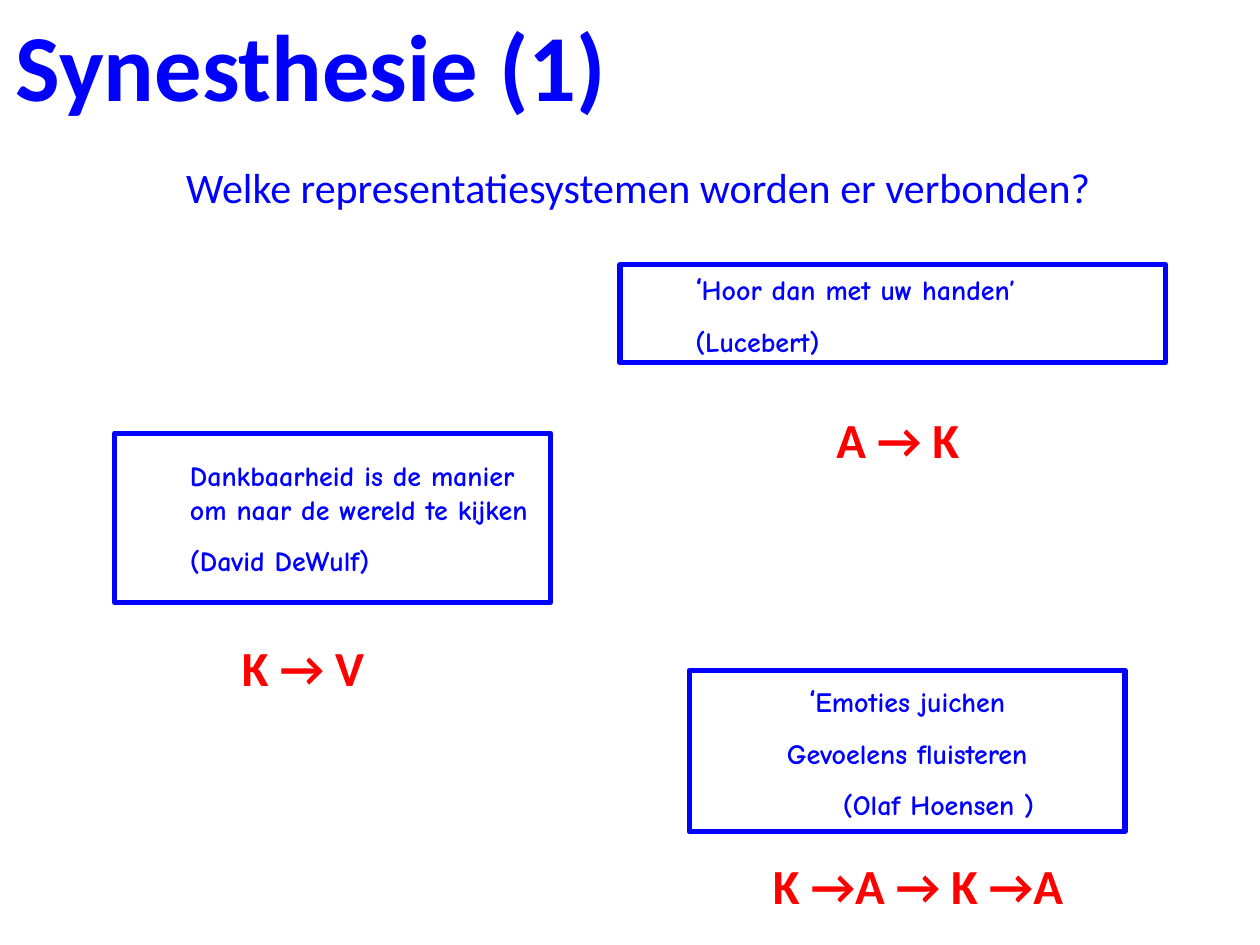
from dataclasses import dataclass

from pptx import Presentation
from pptx.dml.color import RGBColor
from pptx.enum.shapes import MSO_SHAPE
from pptx.enum.text import MSO_ANCHOR, PP_ALIGN
from pptx.util import Inches, Pt

W, H = 10, 7.5


@dataclass(frozen=True)
class Theme:
    """Colours, fonts and type sizes of the slide."""
    blue: RGBColor = RGBColor(0, 0, 255)
    red: RGBColor = RGBColor(255, 0, 0)
    white: RGBColor = RGBColor(255, 255, 255)
    sans: str = "Calibri"
    hand: str = "Comic Neue"
    title: int = 54
    question: int = 24
    answer: int = 28
    quote: int = 16
    mark: int = 18
    border: int = 3
    gap: int = 10


T = Theme()
LEFT, MID = PP_ALIGN.LEFT, PP_ALIGN.CENTER


def place(box):
    """Turn a box in inches into slide lengths."""
    return [Inches(v) for v in box]


def add_run(p, text, **fmt):
    """Append a run with the given font values."""
    r = p.add_run()
    r.text = text
    color = fmt.pop("color")
    for name, value in fmt.items():
        setattr(r.font, name, value)
    r.font.color.rgb = color


def add_label(s, box, text, size, color, bold=True, align=MID,
              anchor=MSO_ANCHOR.TOP, wrap=True):
    """Place one line of sans text in the box."""
    tf = s.shapes.add_textbox(*place(box)).text_frame
    tf.word_wrap, tf.vertical_anchor = wrap, anchor
    p = tf.paragraphs[0]
    p.alignment = align
    add_run(p, text, size=Pt(size), bold=bold, name=T.sans, color=color)


def add_quote(s, box, lines):
    """Place a bordered quote whose lines are (text, alignment, level)."""
    sp = s.shapes.add_shape(MSO_SHAPE.RECTANGLE, *place(box))
    sp.shadow.inherit = False
    sp.fill.solid()
    sp.fill.fore_color.rgb = T.white
    sp.line.color.rgb = T.blue
    sp.line.width = Pt(T.border)
    tf = sp.text_frame
    tf.word_wrap, tf.vertical_anchor = True, MSO_ANCHOR.MIDDLE
    for i, (text, align, level) in enumerate(lines):
        p = tf.add_paragraph() if i else tf.paragraphs[0]
        p.alignment, p.level, p.space_after = align, level, Pt(T.gap)
        pPr = p._p.get_or_add_pPr()
        pPr.set("marL", str(Inches(0.5 * level)))
        pPr.set("indent", "0")
        fmt = dict(bold=True, name=T.hand, color=T.blue)
        if text.startswith("‘"):
            add_run(p, "‘", size=Pt(T.mark), **fmt)
            text = text[1:]
        add_run(p, text, size=Pt(T.quote), **fmt)


def add_heading(s, box):
    """Place the title and, below it, the question."""
    x, y, w, h = box
    add_label(s, (x, y, w * 0.49, h * 0.58), "Synesthesie (1)", T.title,
              T.blue, anchor=MSO_ANCHOR.MIDDLE, wrap=False)
    add_label(s, (x + w * 0.136, y + h * 0.71, w * 0.75, h * 0.29),
              "Welke representatiesystemen worden er verbonden?",
              T.question, T.blue, bold=False, align=LEFT, wrap=False)


def add_example(s, box, lines, answer, answer_box):
    """Place a quote and the answer that belongs to it."""
    add_quote(s, box, lines)
    add_label(s, answer_box, answer, T.answer, T.red)


def main():
    """Build and save the slide."""
    prs = Presentation()
    prs.slide_width, prs.slide_height = Inches(W), Inches(H)
    s = prs.slides.add_slide(prs.slide_layouts[6])
    add_heading(s, (0.02, 0, W, H * 0.232))
    examples = [
        ((4.92, 2.1, 4.33, 0.78),
         [("‘Hoor dan met uw handen’", LEFT, 1), ("(Lucebert)", LEFT, 1)],
         "A → K", (6.18, 3.2, 1.89, 0.57)),
        ((0.91, 3.44, 3.46, 1.34),
         [("Dankbaarheid is de manier om naar de wereld te kijken", LEFT, 1),
          ("(David DeWulf)", LEFT, 1)],
         "K → V", (1.46, 5.01, 1.89, 0.57)),
        ((5.47, 5.32, 3.46, 1.28),
         [("‘Emoties juichen", MID, 0), ("Gevoelens fluisteren", MID, 0),
          ("(Olaf Hoensen )", MID, 1)],
         "K →A → K →A", (5.87, 6.74, 2.83, 0.57)),
    ]
    for example in examples:
        add_example(s, *example)
    prs.save("out.pptx")


if __name__ == "__main__":
    main()
